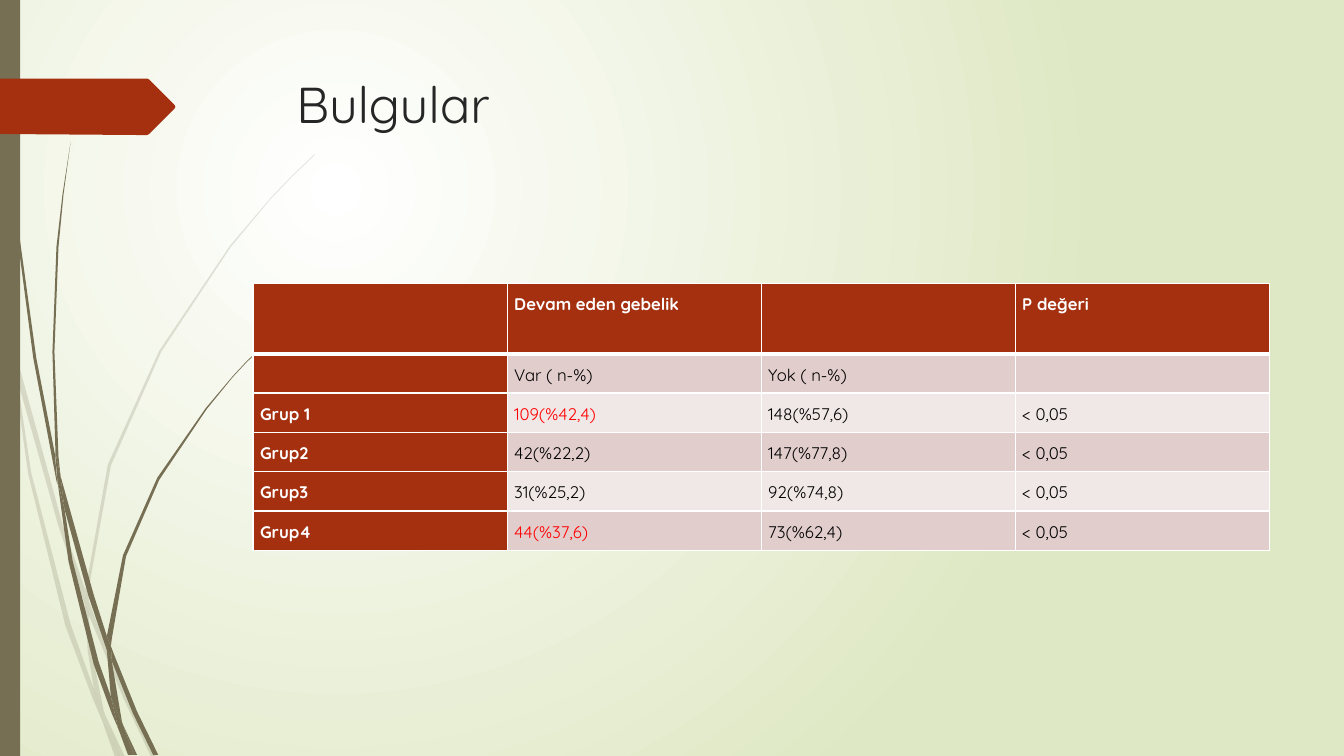
from lxml.etree import SubElement
from pptx import Presentation
from pptx.dml.color import RGBColor
from pptx.enum.shapes import MSO_SHAPE
from pptx.oxml.ns import qn
from pptx.util import Inches, Pt

OLIVE = RGBColor(0x76, 0x6F, 0x54)
RUST = RGBColor(0xA5, 0x30, 0x10)
PALE_GREEN = RGBColor(0xDF, 0xE8, 0xC4)
ROSE = RGBColor(0xE1, 0xCD, 0xCC)
PALE_ROSE = RGBColor(0xF0, 0xE8, 0xE7)
CHARCOAL = RGBColor(0x26, 0x26, 0x26)
WHITE = RGBColor(0xFF, 0xFF, 0xFF)
BLACK = RGBColor(0, 0, 0)
RED = RGBColor(0xFF, 0, 0)
FONT = "Quicksand"

FAINT_BLADES = [
    [(0.11, 3.5), (0.09, 3.22), (0, 2.82), (0, 2.99), (0.1, 3.44)],
    [(0.58, 5.22), (0.84, 5.99), (0.85, 5.86), (0.62, 5.2), (0.14, 3.45), (0.17, 3.76)],
    [(0.92, 6.07), (0.88, 5.96), (0.88, 6.1), (1.23, 6.94), (1.5, 7.51), (1.55, 7.51), (1.27, 6.92)],
    [(1.19, 7.51), (1.24, 7.51), (1.05, 7.11)],
    [(0.93, 6.83), (0.7, 6.19), (0.31, 4.69), (0.17, 3.76), (0.11, 3.5), (0.28, 4.7),
     (0.65, 6.21), (0.92, 6.93), (1.01, 7.14), (0.99, 7.07)],
    [(0.84, 5.99), (0.87, 6.46), (0.93, 6.83), (0.96, 6.92), (1.05, 7.11), (1.03, 7.06),
     (0.91, 6.46), (0.88, 6.1), (0.88, 6.08)],
    [(0.88, 5.84), (1.1, 4.62), (1.6, 3.49), (2.29, 2.45), (2.68, 1.98), (2.9, 1.75),
     (3.12, 1.54), (3.12, 1.53), (2.89, 1.75), (2.68, 1.97), (2.28, 2.44), (1.58, 3.48),
     (1.07, 4.61), (0.85, 5.84), (0.85, 5.86), (0.88, 5.96)],
    [(1.01, 7.14), (1.14, 7.51), (1.19, 7.51)],
    [(0.88, 6.08), (0.88, 6.1), (0.88, 5.96), (0.85, 5.86), (0.84, 5.99)],
    [(0.96, 6.92), (0.93, 6.83), (0.99, 7.07), (1.01, 7.14), (1.19, 7.51), (1.05, 7.11)],
]
DARK_BLADES = [
    [(0.07, 1.1), (0.17, 2.33), (0.33, 3.55), (0.56, 4.77), (0.57, 4.81), (0.55, 4.57),
     (0.55, 4.53), (0.36, 3.55), (0.19, 2.32), (0.08, 1.09), (0.05, 0.48), (0.04, 0),
     (0.03, 0), (0.04, 0.48)],
    [(0.88, 5.92), (1.06, 6.45), (1.06, 6.33), (1.06, 6.31), (0.93, 5.9), (0.6, 4.72), (0.64, 5.05)],
    [(1.13, 6.49), (1.1, 6.41), (1.11, 6.56), (1.32, 7.08), (1.52, 7.49), (1.57, 7.49), (1.36, 7.06)],
    [(1.1, 6.91), (0.98, 6.57), (0.72, 5.56), (0.64, 5.05), (0.57, 4.77), (0.68, 5.57),
     (0.93, 6.59), (1.11, 7.08), (1.17, 7.22), (1.16, 7.17)],
    [(0.6, 4.72), (0.58, 4.53), (0.54, 3.49), (0.58, 2.45), (0.63, 1.93), (0.7, 1.41),
     (0.62, 1.93), (0.56, 2.45), (0.52, 3.49), (0.55, 4.49)],
    [(1.33, 7.49), (1.36, 7.49), (1.22, 7.19)],
    [(0.57, 4.77), (0.64, 5.05), (0.6, 4.72), (0.55, 4.49), (0.55, 4.53)],
    [(1.11, 6.33), (1.25, 5.52), (1.58, 4.76), (2.05, 4.06), (2.31, 3.74), (2.45, 3.59),
     (2.61, 3.44), (2.6, 3.44), (2.45, 3.58), (2.31, 3.73), (2.04, 4.05), (1.56, 4.74),
     (1.22, 5.51), (1.06, 6.31), (1.1, 6.41)],
    [(1.17, 7.22), (1.27, 7.49), (1.31, 7.49)],
    [(1.06, 6.45), (1.1, 6.91), (1.16, 7.06), (1.22, 7.19), (1.21, 7.16), (1.11, 6.56), (1.09, 6.51)],
    [(1.06, 6.45), (1.09, 6.51), (1.11, 6.56), (1.1, 6.41), (1.06, 6.31), (1.06, 6.33)],
    [(1.16, 7.06), (1.1, 6.91), (1.16, 7.17), (1.17, 7.22), (1.3, 7.49), (1.33, 7.49), (1.22, 7.19)],
]
ARROW = [(1.73, 1.08), (1.48, 1.33), (1.46, 1.34), (1.36, 1.34), (0, 1.33), (0, 0.78),
         (1.36, 0.78), (1.46, 0.78), (1.48, 0.79), (1.73, 1.04), (1.74, 1.06)]
FINDINGS = [
    ["", "Devam eden gebelik", "", "P değeri"],
    ["", "Var ( n-%)", "Yok ( n-%)", ""],
    ["Grup 1", "109(%42,4)", "148(%57,6)", "< 0,05"],
    ["Grup2", "42(%22,2)", "147(%77,8)", "< 0,05"],
    ["Grup3", "31(%25,2)", "92(%74,8)", "< 0,05"],
    ["Grup4", "44(%37,6)", "73(%62,4)", "< 0,05"],
]
HIGHLIGHTS = {"109(%42,4)", "44(%37,6)"}


def paint(shape, color):
    shape.shadow.inherit = False
    shape.fill.solid()
    shape.fill.fore_color.rgb = color
    shape.line.fill.background()


def draw_outline(points, color):
    corners = [(Inches(x), Inches(y)) for x, y in points]
    builder = slide.shapes.build_freeform(*corners[0])
    builder.add_line_segments(corners[1:], close=True)
    outline = builder.convert_to_shape()
    paint(outline, color)
    return outline


prs = Presentation()
prs.slide_width = Inches(13.33)
prs.slide_height = Inches(7.5)
slide = prs.slides.add_slide(prs.slide_layouts[6])

backdrop = slide.background.fill
backdrop.gradient()
for stop, color in zip(backdrop.gradient_stops, (WHITE, PALE_GREEN)):
    stop.color.rgb = color
gradient = slide.background._cSld.find(".//" + qn("a:gradFill"))
gradient.remove(gradient.find(qn("a:lin")))
glow = SubElement(gradient, qn("a:path"), {"path": "circle"})
SubElement(glow, qn("a:fillToRect"), {"l": "50000", "t": "50000", "r": "100000", "b": "100000"})

for points in FAINT_BLADES:
    blade = draw_outline(points, OLIVE)
    blade_color = blade._element.spPr.find(qn("a:solidFill")).find(qn("a:srgbClr"))
    SubElement(blade_color, qn("a:alpha"), {"val": "20000"})
for points in DARK_BLADES:
    draw_outline(points, OLIVE)

side_bar = slide.shapes.add_shape(MSO_SHAPE.RECTANGLE, 0, 0, Inches(0.2), Inches(7.5))
paint(side_bar, OLIVE)
draw_outline(ARROW, RUST)

title = slide.shapes.add_textbox(Inches(2.84), Inches(0.68), Inches(9.75), Inches(1.4))
title.text_frame.word_wrap = True
title.text_frame.text = "Bulgular"
title_font = title.text_frame.paragraphs[0].runs[0].font
title_font.name = FONT
title_font.size = Pt(36)
title_font.color.rgb = CHARCOAL

findings = slide.shapes.add_table(
    len(FINDINGS), 4, Inches(2.51), Inches(2.81), Inches(10.07), Inches(2.65)).table
for column in findings.columns:
    column.width = Inches(2.52)
for r, values in enumerate(FINDINGS):
    findings.rows[r].height = Inches(0.39 if r else 0.7)
    for c, value in enumerate(values):
        cell = findings.cell(r, c)
        cell.margin_left = cell.margin_right = Inches(0.07)
        cell.margin_top = cell.margin_bottom = 0
        for side in "LRTB":
            thick = (r, side) in ((0, "B"), (1, "T"))
            border = SubElement(cell._tc.get_or_add_tcPr(), qn("a:ln" + side),
                                {"w": str(Pt(3 if thick else 1))})
            border_fill = SubElement(border, qn("a:solidFill"))
            SubElement(border_fill, qn("a:srgbClr"), {"val": str(WHITE)})
        heading = r == 0 or c == 0
        cell.fill.solid()
        cell.fill.fore_color.rgb = RUST if heading else ROSE if r % 2 else PALE_ROSE
        cell.text_frame.text = value
        paragraph = cell.text_frame.paragraphs[0]
        if value:
            paragraph.line_spacing = 1.5
        for run in paragraph.runs:
            run.font.name = FONT
            run.font.size = Pt(12)
            run.font.bold = heading
            run.font.color.rgb = WHITE if heading else RED if value in HIGHLIGHTS else BLACK

prs.save("out.pptx")
